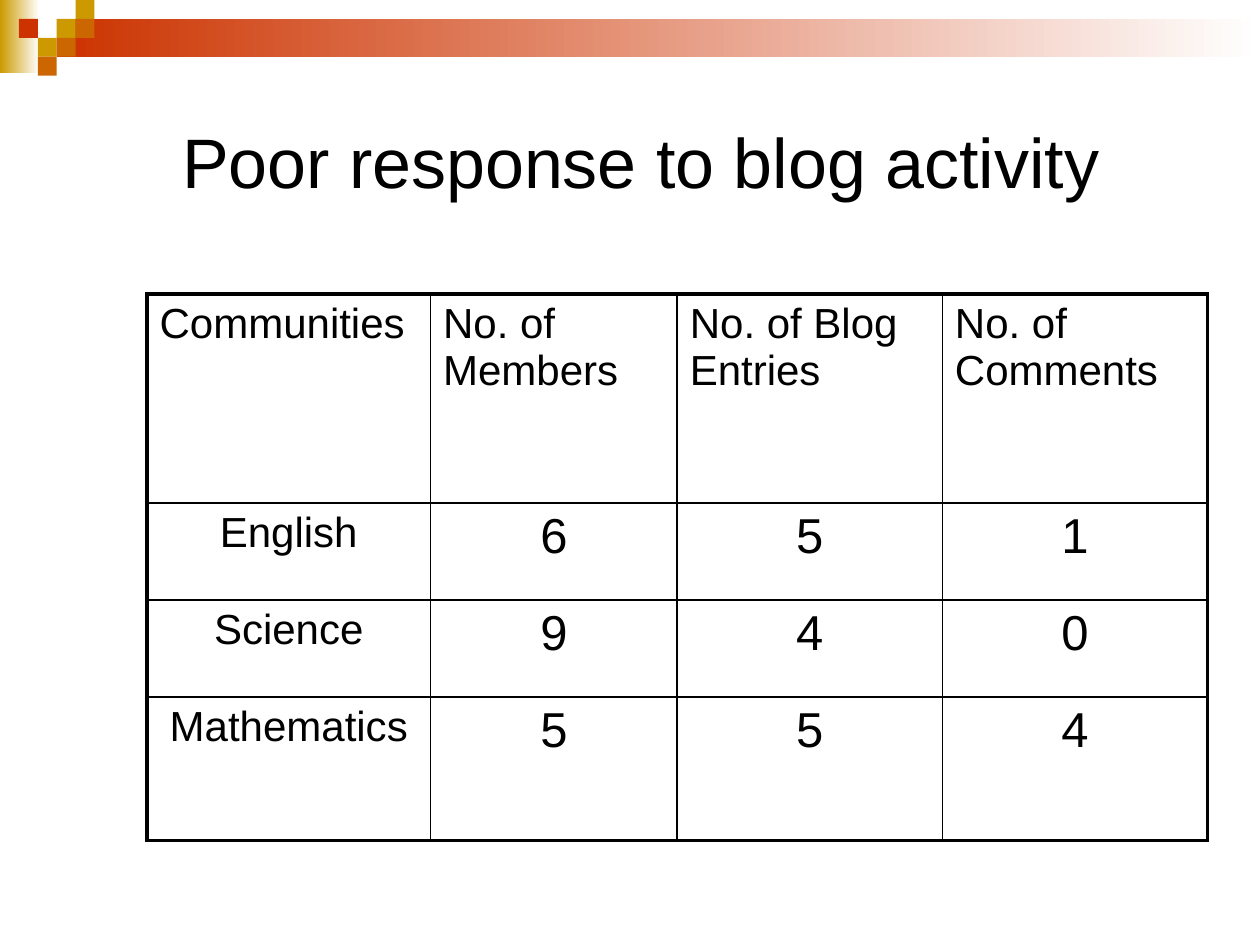
from lxml import etree
from pptx import Presentation
from pptx.dml.color import RGBColor
from pptx.enum.shapes import MSO_SHAPE
from pptx.enum.text import MSO_ANCHOR, PP_ALIGN
from pptx.oxml.ns import qn
from pptx.util import Pt

RECT = MSO_SHAPE.RECTANGLE
MIDDLE = MSO_ANCHOR.MIDDLE
LEFT, CENTER = PP_ALIGN.LEFT, PP_ALIGN.CENTER

FONT = "Arial"
BLACK, WHITE = "000000", "FFFFFF"
GOLD, ORANGE, RED = "CC9900", "CC6600", "CC3300"
THIN, THICK = 1, 2.25

SQUARES = [(3, 1, GOLD), (4, 0, GOLD), (4, 1, ORANGE), (2, 2, GOLD),
           (1, 1, RED), (3, 2, ORANGE), (2, 3, ORANGE)]
ROWS = [("Communities", "No. of Members", "No. of Blog Entries", "No. of Comments"),
        ("English", "6", "5", "1"),
        ("Science", "9", "4", "0"),
        ("Mathematics", "5", "5", "4")]
COL_WIDTHS = [162, 141, 151.5, 151.5]
ROW_HEIGHTS = [119.5, 55.4, 55.4, 82]


def color(value):
    return RGBColor.from_string(value)


def add_run(p, text, size):
    r = p.add_run()
    r.text = text
    r.font.name = FONT
    r.font.size = Pt(size)
    r.font.color.rgb = color(BLACK)


def add_rect(s, x, y, w, h, fill, fade_to=None):
    sp = s.shapes.add_shape(RECT, Pt(x), Pt(y), Pt(w), Pt(h))
    sp.shadow.inherit = False
    sp.line.fill.background()
    if fade_to:
        sp.fill.gradient()
        sp.fill.gradient_angle = 0
        for stop, value in zip(sp.fill.gradient_stops, (fill, fade_to)):
            stop.color.rgb = color(value)
    else:
        sp.fill.solid()
        sp.fill.fore_color.rgb = color(fill)


def add_banner(s, x, y, w, unit):
    add_rect(s, x, y, 22.5, 42, GOLD, WHITE)
    add_rect(s, x + 3 * unit, y + unit, w - 3 * unit, 2 * unit, RED, WHITE)
    for col, row, fill in SQUARES:
        add_rect(s, x + col * unit, y + row * unit, unit, unit, fill)


def add_title(s, x, y, w, h):
    sp = s.shapes.title
    sp.left, sp.top, sp.width, sp.height = Pt(x), Pt(y), Pt(w), Pt(h)
    tf = sp.text_frame
    tf.vertical_anchor = MIDDLE
    p = tf.paragraphs[0]
    p.alignment = CENTER
    add_run(p, " ", 44)
    add_run(p, "Poor response to blog activity", 40)


def set_borders(cell, widths):
    tc_pr = cell._tc.get_or_add_tcPr()
    for i, (side, width) in enumerate(widths.items()):
        ln = etree.Element(qn(f"a:ln{side}"), w=str(Pt(width)))
        fill = etree.SubElement(ln, qn("a:solidFill"))
        etree.SubElement(fill, qn("a:srgbClr"), val=BLACK)
        tc_pr.insert(i, ln)


def add_blog_table(s, x, y):
    last_row, last_col = len(ROWS) - 1, len(COL_WIDTHS) - 1
    table = s.shapes.add_table(len(ROWS), len(COL_WIDTHS), Pt(x), Pt(y),
                               Pt(sum(COL_WIDTHS)), Pt(sum(ROW_HEIGHTS))).table
    table.first_row = table.horz_banding = False
    for col, width in zip(table.columns, COL_WIDTHS):
        col.width = Pt(width)
    for i, (height, texts) in enumerate(zip(ROW_HEIGHTS, ROWS)):
        table.rows[i].height = Pt(height)
        for j, text in enumerate(texts):
            cell = table.cell(i, j)
            cell.fill.background()
            p = cell.text_frame.paragraphs[0]
            p.alignment = LEFT if i == 0 else CENTER
            add_run(p, text, 28 if i and j else 24)
            set_borders(cell, {"L": THICK if j == 0 else THIN,
                               "R": THICK if j == last_col else THIN,
                               "T": THICK if i == 0 else THIN,
                               "B": THICK if i == last_row else THIN})


def main():
    prs = Presentation()
    prs.slide_width, prs.slide_height = Pt(720), Pt(540)
    s = prs.slides.add_slide(prs.slide_layouts[5])
    add_banner(s, 0, 0, 720, 10.8)
    add_title(s, 36, 36, 648, 108)
    add_blog_table(s, 84, 168)
    prs.save("out.pptx")


if __name__ == "__main__":
    main()
